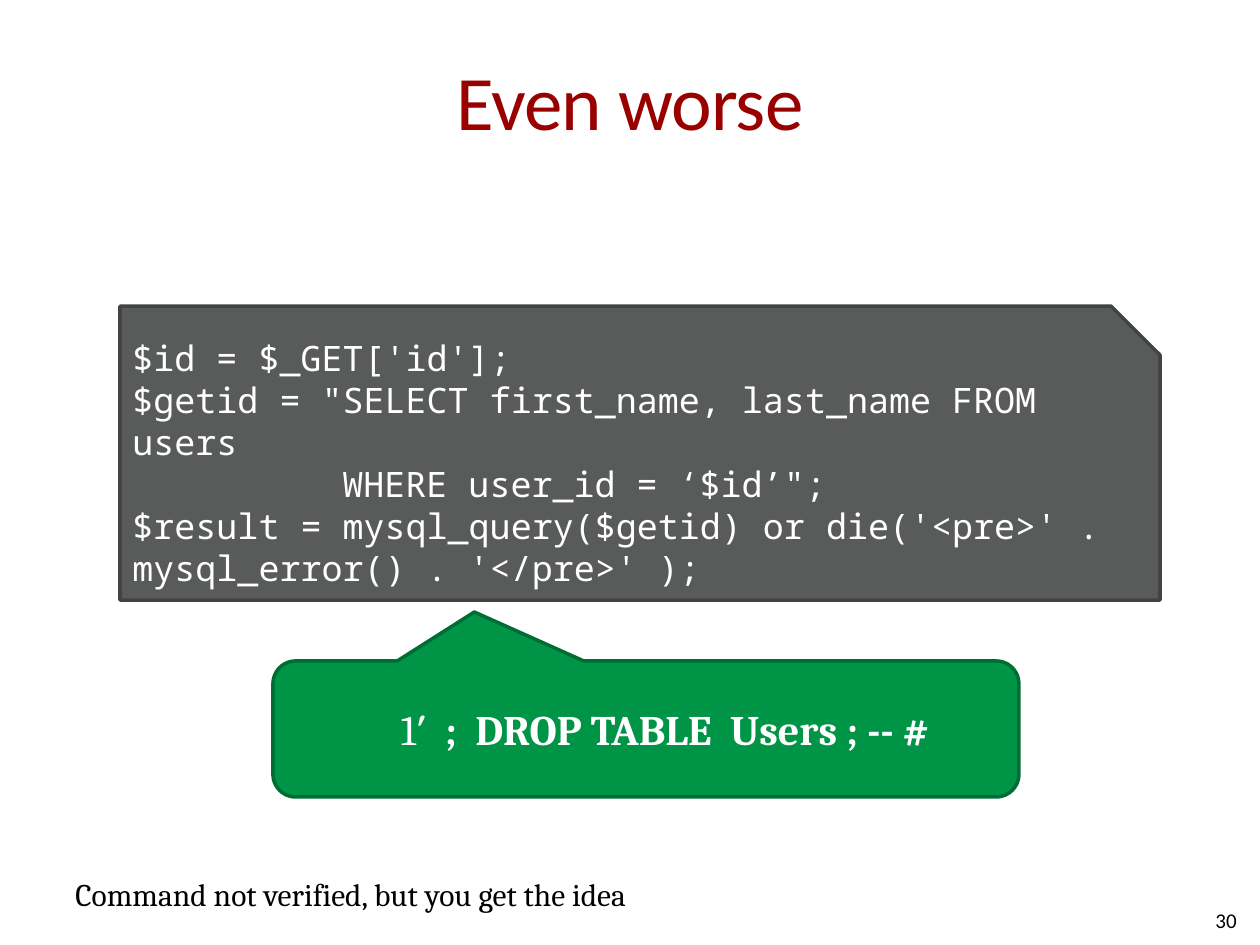
from pptx import Presentation
from pptx.dml.color import RGBColor
from pptx.enum.shapes import MSO_SHAPE
from pptx.enum.text import MSO_ANCHOR, PP_ALIGN
from pptx.util import Pt

EMU_PER_PX = 914400 / 126
LEFT, CENTER, RIGHT = PP_ALIGN.LEFT, PP_ALIGN.CENTER, PP_ALIGN.RIGHT
TOP, MIDDLE = MSO_ANCHOR.TOP, MSO_ANCHOR.MIDDLE
SNIPPED = MSO_SHAPE.SNIP_1_RECTANGLE
CALLOUT = MSO_SHAPE.ROUNDED_RECTANGULAR_CALLOUT

RED = RGBColor(0x99, 0x00, 0x00)
BLACK = RGBColor(0x00, 0x00, 0x00)
WHITE = RGBColor(0xFF, 0xFF, 0xFF)
GRAY = RGBColor(0x59, 0x5A, 0x5A)
DARK_GRAY = RGBColor(0x42, 0x43, 0x43)
GREEN = RGBColor(0x00, 0x94, 0x46)
DARK_GREEN = RGBColor(0x00, 0x6D, 0x34)


def px(*lengths):
    return [round(length * EMU_PER_PX) for length in lengths]


def write(shape, lines, font, size, color, align=LEFT, anchor=TOP, wrap=True):
    frame = shape.text_frame
    frame.word_wrap = wrap
    frame.vertical_anchor = anchor
    frame.text = "\n".join(lines)
    for paragraph in frame.paragraphs:
        paragraph.alignment = align
        paragraph.font.name = font
        paragraph.font.size = Pt(size)
        paragraph.font.color.rgb = color
    return frame


presentation = Presentation()
presentation.slide_width, presentation.slide_height = px(1260, 945)
slide = presentation.slides.add_slide(presentation.slide_layouts[6])
shapes = slide.shapes

# Title
title = shapes.add_textbox(*px(63, 21, 1134, 158))
frame = write(title, ["Even worse"], "Calibri", 44, RED, CENTER, MIDDLE)
frame.margin_left = frame.margin_right = 0
frame.paragraphs[0].runs[0].font._element.set("spc", "-50")

# Slide number
number = shapes.add_textbox(*px(955, 895, 294, 50))
write(number, ["30"], "Calibri", 12, BLACK, RIGHT, MIDDLE)

# Code panel and callout bodies
panels = []
for kind, box, fill, line in [
    (SNIPPED, (120, 306, 1040, 294), GRAY, DARK_GRAY),
    (CALLOUT, (273, 661, 746, 136), GREEN, DARK_GREEN),
]:
    panel = shapes.add_shape(kind, *px(*box))
    panel.shadow.inherit = False
    panel.fill.solid()
    panel.fill.fore_color.rgb = fill
    panel.line.color.rgb = line
    panel.line.width = Pt(2)
    panels.append(panel)
code, callout = panels

# Code, with the WHERE clause indented
frame = write(code, [
    "$id = $_GET['id'];",
    "$getid = \"SELECT first_name, last_name FROM users",
    "WHERE user_id = ‘$id’\";",
    "$result = mysql_query($getid) or die('<pre>' . mysql_error() . '</pre>' );",
], "Noto Sans Mono", 20, WHITE)
frame.paragraphs[2]._p.get_or_add_pPr().set("marL", str(px(210)[0]))

# Injected input
callout.adjustments[0] = -0.23
callout.adjustments[1] = -0.86
frame = write(callout, ["1"], "Cambria", 24, WHITE, anchor=MIDDLE)
paragraph = frame.paragraphs[0]
paragraph.level = 1
paragraph._p.get_or_add_pPr().set("marL", str(px(109)[0]))
injection = paragraph.add_run()
injection.text = "′  ;  DROP TABLE  Users ; -- #"
injection.font.bold = True

# Remark
remark = shapes.add_textbox(*px(63, 869, 610, 50))
write(remark, ["Command not verified, but you get the idea"], "Cambria", 18, BLACK, wrap=False)

presentation.save("out.pptx")
